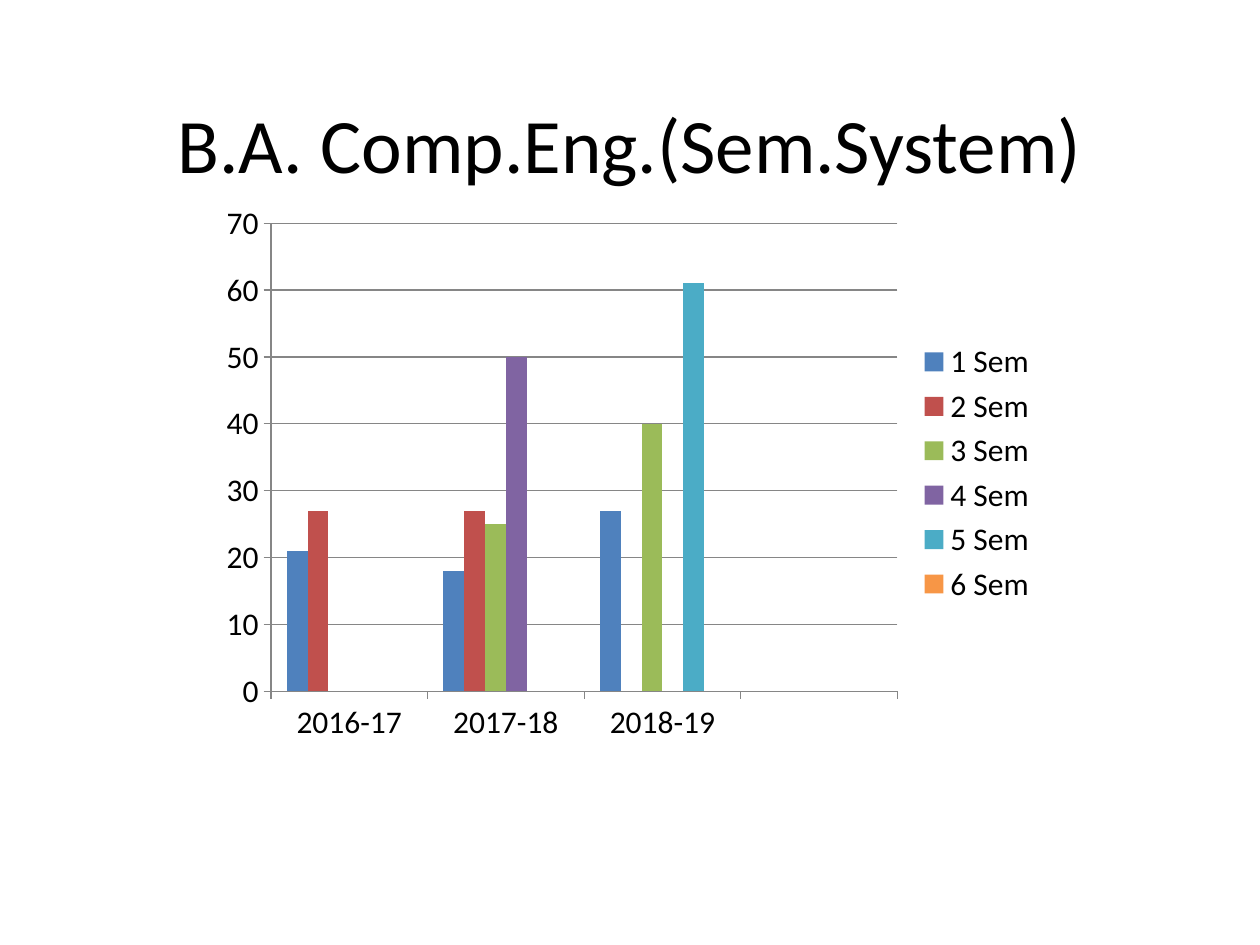
from pptx import Presentation
from pptx.chart.data import CategoryChartData
from pptx.dml.color import RGBColor
from pptx.enum.chart import XL_CHART_TYPE, XL_LEGEND_POSITION, XL_TICK_MARK
from pptx.enum.text import MSO_ANCHOR, PP_ALIGN
from pptx.util import Cm, Pt

COLUMNS = XL_CHART_TYPE.COLUMN_CLUSTERED
RIGHT = XL_LEGEND_POSITION.RIGHT
OUTSIDE = XL_TICK_MARK.OUTSIDE
MIDDLE = MSO_ANCHOR.MIDDLE
CENTER = PP_ALIGN.CENTER

FONT = "Calibri"
COLORS = {
    "text": "000000",
    "axis": "868686",
    "1 Sem": "4F81BD",
    "2 Sem": "C0504D",
    "3 Sem": "9BBB59",
    "4 Sem": "8064A2",
    "5 Sem": "4BACC6",
    "6 Sem": "F79646",
}
YEARS = ["2016-17", "2017-18", "2018-19", ""]
RESULTS = {
    "1 Sem": (21, 18, 27, None),
    "2 Sem": (27, 27, None, None),
    "3 Sem": (None, 25, 40, None),
    "4 Sem": (None, 50, None, None),
    "5 Sem": (None, None, 61, None),
    "6 Sem": (None, None, None, None),
}


class SlideBuilder:
    def __init__(self, prs):
        self.s = prs.slides.add_slide(prs.slide_layouts[5])

    def color(self, name):
        return RGBColor.from_string(COLORS[name])

    def style_font(self, font, size):
        font.name = FONT
        font.size = Pt(size)
        font.color.rgb = self.color("text")

    def style_line(self, line):
        line.color.rgb = self.color("axis")
        line.width = Pt(0.75)

    def title(self, text, left, top, width, height):
        sp = self.s.shapes.title
        sp.left, sp.top, sp.width, sp.height = left, top, width, height
        tf = sp.text_frame
        tf.text = text
        tf.vertical_anchor = MIDDLE
        p = tf.paragraphs[0]
        p.alignment = CENTER
        self.style_font(p.runs[0].font, 44)

    def column_chart(self, categories, series, left, top, width, height):
        data = CategoryChartData()
        data.categories = categories
        for name, values in series.items():
            data.add_series(name, values)
        chart = self.s.shapes.add_chart(
            COLUMNS, left, top, width, height, data).chart
        self.style_font(chart.font, 18)
        chart.has_title = False
        chart.has_legend = True
        chart.legend.position = RIGHT
        chart.legend.include_in_layout = False

        plot = chart.plots[0]
        plot.gap_width = 150
        plot.overlap = 0
        plot.vary_by_categories = False
        for ser in plot.series:
            ser.format.fill.solid()
            ser.format.fill.fore_color.rgb = self.color(ser.name)

        for axis in (chart.category_axis, chart.value_axis):
            axis.major_tick_mark = OUTSIDE
            self.style_line(axis.format.line)
        axis = chart.value_axis
        axis.minimum_scale, axis.maximum_scale, axis.major_unit = 0, 70, 10
        axis.has_major_gridlines = True
        self.style_line(axis.major_gridlines.format.line)


def main():
    prs = Presentation()
    prs.slide_width, prs.slide_height = Cm(25.4), Cm(19.05)
    slide = SlideBuilder(prs)
    slide.title("B.A. Comp.Eng.(Sem.System)",
                Cm(1.9), Cm(0.84), Cm(21.6), Cm(4.08))
    slide.column_chart(YEARS, RESULTS,
                       Cm(4.23), Cm(3.89), Cm(16.93), Cm(11.29))
    prs.save("out.pptx")


if __name__ == "__main__":
    main()
